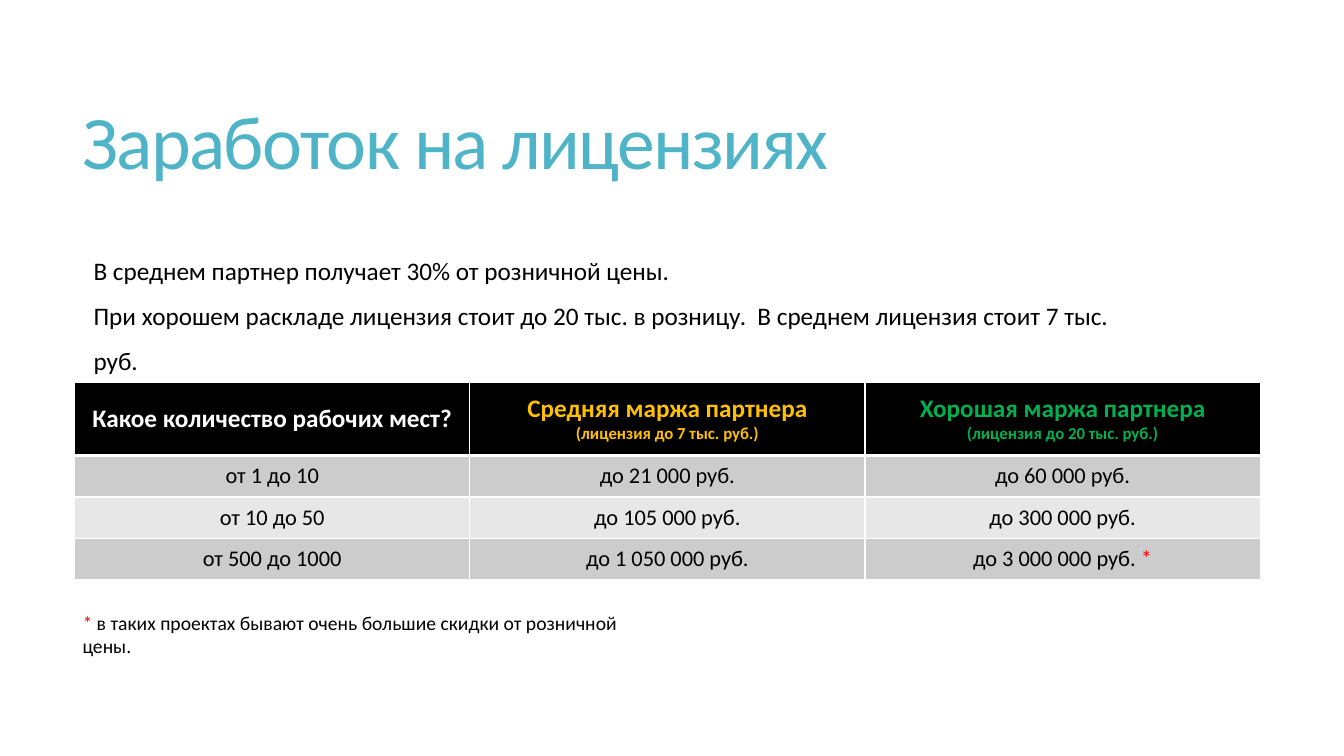
"""Build the slide about partner earnings on licences."""
from lxml import etree
from pptx import Presentation
from pptx.dml.color import RGBColor
from pptx.enum.text import MSO_ANCHOR, MSO_AUTO_SIZE, PP_ALIGN
from pptx.oxml.ns import qn
from pptx.util import Inches, Pt

LEFT, CENTER = PP_ALIGN.LEFT, PP_ALIGN.CENTER
MIDDLE = MSO_ANCHOR.MIDDLE
NO_AUTOFIT = MSO_AUTO_SIZE.NONE
TITLE_ONLY_LAYOUT = 5
FONT = "Calibri"
COLORS = {
    "title": "50B4C8", "text": "000000", "white": "FFFFFF", "header": "000000",
    "average": "FFC000", "good": "00B050", "note": "FF0000",
    "odd": "CCCCCC", "even": "E7E7E7",
}

TITLE = "Заработок на лицензиях"
INTRO = [
    [("В среднем партнер получает 30% от розничной цены.", {})],
    [("При хорошем раскладе лицензия стоит до 20 тыс. в розницу.  "
      "В среднем лицензия стоит 7 тыс. руб.", {})],
]
FOOTNOTE = [[
    ("*", {"color": "note"}),
    (" в таких проектах бывают очень большие скидки от розничной цены.", {}),
]]
HEADERS = [
    ("white", [[("Какое количество рабочих мест?", {})]]),
    ("average", [[("Средняя маржа партнера", {})],
                 [("(лицензия до 7 тыс. руб.)", {"size": 12})]]),
    ("good", [[("Хорошая маржа партнера", {})],
              [("(лицензия до 20 тыс. руб.)", {"size": 12})]]),
]
ROWS = [
    [[("от 1 до 10", {})], [("до 21 000 руб.", {})], [("до 60 000 руб.", {})]],
    [[("от 10 до 50", {})], [("до 105 000 руб.", {})], [("до 300 000 руб.", {})]],
    [[("от 500 до 1000", {})], [("до 1 050 000 руб.", {})],
     [("до 3 000 000 руб. ", {}), ("*", {"color": "note"})]],
]
TABLE_LEFT, TABLE_TOP, COLUMN_WIDTH = 0.74, 3.79, 3.92
HEADER_HEIGHT, ROW_HEIGHT = 0.73, 0.41


def write_text(frame, paragraphs, align=LEFT, line_spacing=None, **base):
    """Fill a text frame; each run's own format overrides the base format."""
    for index, runs in enumerate(paragraphs):
        paragraph = frame.paragraphs[0] if index == 0 else frame.add_paragraph()
        paragraph.alignment = align
        if line_spacing:
            paragraph.line_spacing = line_spacing
        for text, override in runs:
            style = {"color": "text", "bold": False, **base, **override}
            run = paragraph.add_run()
            run.text = text
            run.font.name = FONT
            run.font.size = Pt(style["size"])
            run.font.bold = style["bold"]
            run.font.color.rgb = RGBColor.from_string(COLORS[style["color"]])
            if "tracking" in style:
                run.font._element.set("spc", str(round(style["tracking"] * 100)))


def add_text_box(slide, box, paragraphs, **style):
    """Add a wrapping text box."""
    shape = slide.shapes.add_textbox(*map(Inches, box))
    shape.text_frame.word_wrap = True
    write_text(shape.text_frame, paragraphs, **style)


def set_borders(cell, **widths):
    """Draw white cell borders with widths in points."""
    properties = cell._tc.get_or_add_tcPr()
    for side in "LRTB":
        line = etree.SubElement(properties, qn(f"a:ln{side}"), w=str(Pt(widths[side])))
        fill = etree.SubElement(line, qn("a:solidFill"))
        etree.SubElement(fill, qn("a:srgbClr"), val=COLORS["white"])


def format_cell(cell, paragraphs, fill, top=1, bottom=1, **style):
    """Fill, frame and write one table cell."""
    set_borders(cell, L=1, R=1, T=top, B=bottom)
    cell.fill.solid()
    cell.fill.fore_color.rgb = RGBColor.from_string(COLORS[fill])
    cell.vertical_anchor = MIDDLE
    write_text(cell.text_frame, paragraphs, align=CENTER, **style)


def add_title(slide):
    """Place and format the slide title."""
    title = slide.shapes.title
    title.left, title.top, title.width, title.height = map(
        Inches, (0.72, 0.55, 11.78, 1.81))
    title.text_frame.auto_size = NO_AUTOFIT
    title.text_frame.vertical_anchor = MIDDLE
    write_text(title.text_frame, [[(TITLE, {})]], line_spacing=0.85,
               size=54, color="title", tracking=-1.2)


def add_margin_table(slide):
    """Add the table of partner margins."""
    width = COLUMN_WIDTH * len(HEADERS)
    height = HEADER_HEIGHT + ROW_HEIGHT * len(ROWS)
    table = slide.shapes.add_table(
        len(ROWS) + 1, len(HEADERS),
        *map(Inches, (TABLE_LEFT, TABLE_TOP, width, height))).table
    for column in table.columns:
        column.width = Inches(COLUMN_WIDTH)
    for index, row in enumerate(table.rows):
        row.height = Inches(ROW_HEIGHT if index else HEADER_HEIGHT)
    for column, (color, paragraphs) in enumerate(HEADERS):
        format_cell(table.cell(0, column), paragraphs, "header", bottom=3,
                    size=18, bold=True, color=color)
    for row, values in enumerate(ROWS, start=1):
        for column, runs in enumerate(values):
            format_cell(table.cell(row, column), [runs],
                        "odd" if row % 2 else "even",
                        top=3 if row == 1 else 1, size=16)


def main():
    """Create and save the presentation."""
    presentation = Presentation()
    presentation.slide_width = Inches(13.33)
    presentation.slide_height = Inches(7.5)
    slide = presentation.slides.add_slide(
        presentation.slide_layouts[TITLE_ONLY_LAYOUT])
    add_title(slide)
    add_margin_table(slide)
    add_text_box(slide, (0.83, 2.33, 10.72, 1.01), INTRO, line_spacing=1.5, size=18)
    add_text_box(slide, (0.72, 6.01, 5.99, 0.34), FOOTNOTE, size=14)
    presentation.save("out.pptx")


if __name__ == "__main__":
    main()
